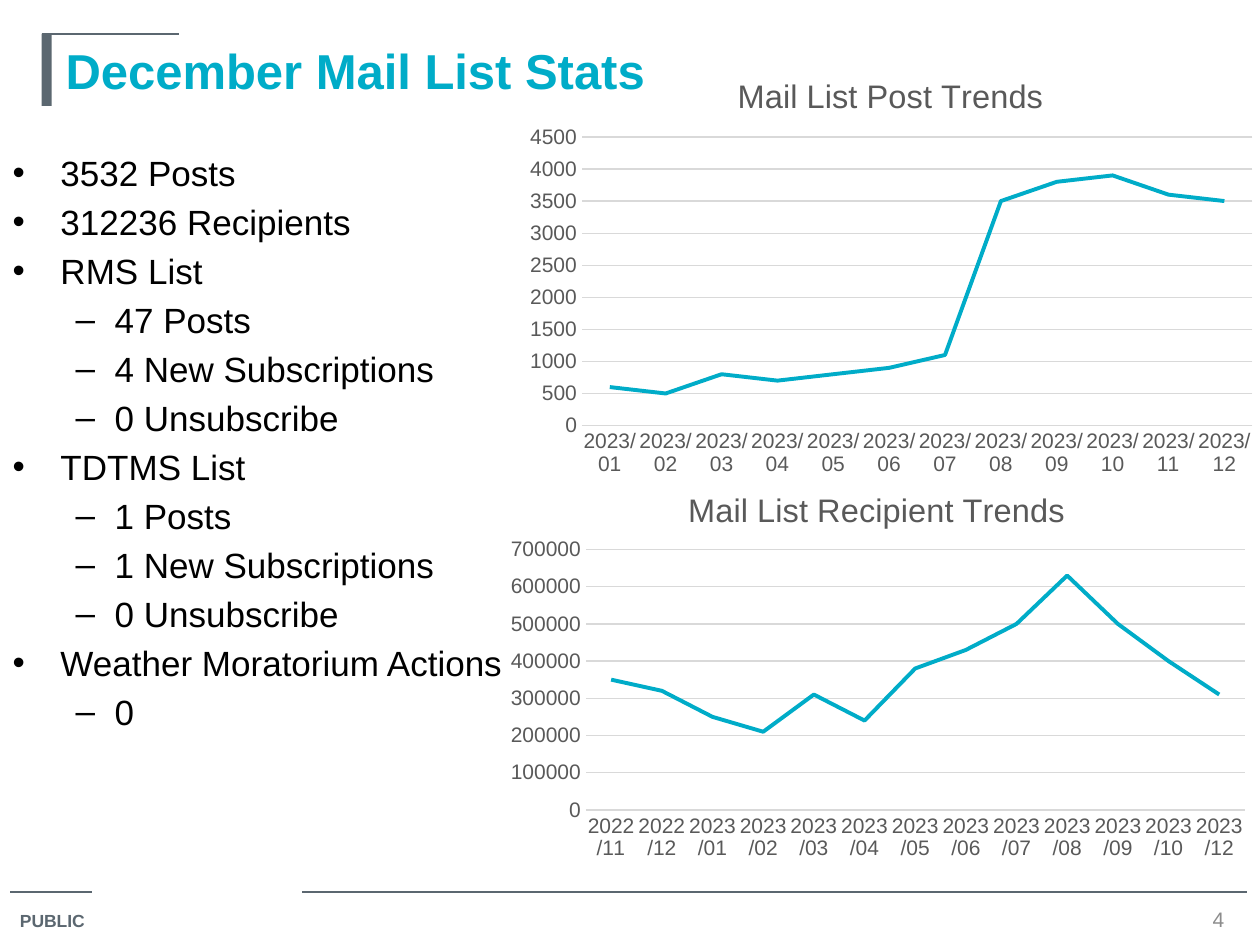
"""Build the December mailing statistics slide."""
from dataclasses import dataclass

import lxml.etree
import pptx
import pptx.chart.data
import pptx.dml.color
import pptx.enum.chart
import pptx.enum.shapes
import pptx.enum.text
import pptx.oxml
import pptx.oxml.ns
import pptx.util

Inches = pptx.util.Inches
Pt = pptx.util.Pt
qn = pptx.oxml.ns.qn
ALIGN = pptx.enum.text.PP_ALIGN
ANCHOR = pptx.enum.text.MSO_ANCHOR
CHART = pptx.enum.chart


@dataclass(frozen=True)
class Theme:
    """Hold the colours, font and type sizes."""
    face: str = "Arial"
    teal: str = "00ACC8"
    slate: str = "5B6770"
    ink: str = "000000"
    label: str = "595959"
    pale: str = "8C8C8C"
    grid: str = "D9D9D9"
    head: float = 28
    body: float = 20
    title: float = 18.6
    tick: float = 12
    mark: float = 10


LOOK = Theme()

POINTS = [
    (0, "3532 Posts"),
    (0, "312236 Recipients"),
    (0, "RMS List"),
    (1, "47 Posts"),
    (1, "4 New Subscriptions"),
    (1, "0 Unsubscribe"),
    (0, "TDTMS List"),
    (1, "1 Posts"),
    (1, "1 New Subscriptions"),
    (1, "0 Unsubscribe"),
    (0, "Weather Moratorium Actions"),
    (1, "0"),
]
BULLETS = [("•", 0.38, -0.38), ("–", 0.81, -0.31)]

YEAR = [f"2023/{month:02}" for month in range(1, 13)]
POSTS = dict(
    title="Mail List Post Trends", cats=YEAR, top=4500, step=500,
    vals=[600, 500, 800, 700, 800, 900, 1100, 3500, 3800, 3900, 3600, 3500],
    plot=dict(x=0.09, y=0.195, w=0.89, h=0.67))
READERS = dict(
    title="Mail List Recipient Trends",
    cats=["2022/11", "2022/12"] + YEAR[:10] + YEAR[11:],
    top=700000, step=100000,
    vals=[350000, 320000, 250000, 210000, 310000, 240000, 380000, 430000,
          500000, 630000, 500000, 400000, 310000],
    plot=dict(x=0.12, y=0.205, w=0.86, h=0.65))


def apply(item, **values):
    """Set each named attribute on the item."""
    for name, value in values.items():
        setattr(item, name, value)


def color(code):
    """Turn a hex code into a colour."""
    return pptx.dml.color.RGBColor.from_string(code)


def style(font, size, code, bold=False):
    """Format a font with the theme face."""
    apply(font, name=LOOK.face, size=Pt(size), bold=bold)
    font.color.rgb = color(code)


def stroke(line, code, width):
    """Format a line."""
    line.color.rgb = color(code)
    line.width = Pt(width)


def place(shape, box):
    """Move a shape to a box in inches."""
    apply(shape, **dict(zip(("left", "top", "width", "height"), map(Inches, box))))


def rule(slide, left, top, width):
    """Draw a thin horizontal line."""
    line = slide.shapes.add_connector(
        pptx.enum.shapes.MSO_CONNECTOR.STRAIGHT,
        Inches(left), Inches(top), Inches(left + width), Inches(top))
    stroke(line.line, LOOK.slate, 0.75)
    lxml.etree.SubElement(line._element.spPr, qn("a:effectLst"))


def label(slide, box, text, size, code, bold=False, **values):
    """Add a small one-line text box."""
    frame = slide.shapes.add_textbox(*map(Inches, box)).text_frame
    apply(frame, word_wrap=True, **values)
    para = frame.paragraphs[0]
    run = para.add_run()
    run.text = text
    style(run.font, size, code, bold)
    return para


def header(slide, box):
    """Place the title with its bar and line."""
    left, top, width, height = box
    title = slide.shapes.title
    place(title, box)
    frame = title.text_frame
    apply(frame, text="December Mail List Stats", vertical_anchor=ANCHOR.TOP,
          auto_size=pptx.enum.text.MSO_AUTO_SIZE.NONE)
    para = frame.paragraphs[0]
    para.alignment = ALIGN.LEFT
    style(para.runs[0].font, LOOK.head, LOOK.teal, True)
    bar = slide.shapes.add_shape(
        pptx.enum.shapes.MSO_SHAPE.RECTANGLE,
        Inches(left - 0.09), Inches(top), Inches(0.08), Inches(height - 0.08))
    bar.shadow.inherit = False
    bar.fill.solid()
    bar.fill.fore_color.rgb = color(LOOK.slate)
    bar.line.fill.background()
    rule(slide, left - 0.09, top, 1.09)


def points(slide, box):
    """Fill the body with the bulleted figures."""
    body = slide.placeholders[1]
    place(body, box)
    frame = body.text_frame
    apply(frame, auto_size=pptx.enum.text.MSO_AUTO_SIZE.NONE,
          vertical_anchor=ANCHOR.TOP)
    for index, (level, text) in enumerate(POINTS):
        para = frame.add_paragraph() if index else frame.paragraphs[0]
        apply(para, level=level, space_before=Pt(4 if index else 0))
        sign, left, hang = BULLETS[level]
        props = para._p.get_or_add_pPr()
        props.set("marL", str(Inches(left)))
        props.set("indent", str(Inches(hang)))
        lxml.etree.SubElement(props, qn("a:buChar")).set("char", sign)
        run = para.add_run()
        run.text = text
        style(run.font, LOOK.body, LOOK.ink)


def frame_plot(chart, plot):
    """Fix the inner plot area as fractions of the chart."""
    area = chart._chartSpace.chart.plotArea
    for old in area.findall(qn("c:layout")):
        area.remove(old)
    outer = lxml.etree.Element(qn("c:layout"))
    area.insert(0, outer)
    inner = lxml.etree.SubElement(outer, qn("c:manualLayout"))
    values = dict(layoutTarget="inner", xMode="edge", yMode="edge", **plot)
    for name, value in values.items():
        lxml.etree.SubElement(inner, qn(f"c:{name}")).set("val", str(value))


def trend(slide, box, facts):
    """Add one line chart."""
    data = pptx.chart.data.CategoryChartData()
    data.categories = facts["cats"]
    data.add_series("Series 1", facts["vals"])
    chart = slide.shapes.add_chart(
        CHART.XL_CHART_TYPE.LINE, *map(Inches, box), data).chart
    style(chart.font, LOOK.mark, LOOK.ink)
    apply(chart, has_legend=False, has_title=True)
    head = chart.chart_title
    head.include_in_layout = False
    head.text_frame.text = facts["title"]
    style(head.text_frame.paragraphs[0].runs[0].font, LOOK.title, LOOK.label)
    none = CHART.XL_TICK_MARK.NONE
    for axis in (chart.category_axis, chart.value_axis):
        apply(axis, major_tick_mark=none, minor_tick_mark=none)
        style(axis.tick_labels.font, LOOK.tick, LOOK.label)
    stroke(chart.category_axis.format.line, LOOK.grid, 0.75)
    scale = chart.value_axis
    apply(scale, minimum_scale=0, maximum_scale=facts["top"],
          major_unit=facts["step"], has_major_gridlines=True)
    scale.format.line.fill.background()
    stroke(scale.major_gridlines.format.line, LOOK.grid, 0.75)
    chart.plots[0].vary_by_categories = False
    series = chart.plots[0].series[0]
    series.smooth = False
    series.marker.style = CHART.XL_MARKER_STYLE.NONE
    stroke(series.format.line, LOOK.teal, 2.25)
    frame_plot(chart, facts["plot"])


def footer(slide, box):
    """Place the footer lines, marking and page number."""
    left, top, width, height = box
    rule(slide, left, top, 0.65)
    rule(slide, left + 2.32, top, width - 2.32)
    label(slide, (left - 0.02, top + 0.09, 0.77, 0.28), "PUBLIC",
          LOOK.mark, LOOK.slate, True)
    page = label(slide, (left + width - 0.48, top + 0.1, 0.5, 0.23), "4",
                 LOOK.tick, LOOK.pale, vertical_anchor=ANCHOR.MIDDLE)
    page.alignment = ALIGN.CENTER


def main():
    """Build and save the slide."""
    deck = pptx.Presentation()
    apply(deck, slide_width=Inches(10), slide_height=Inches(7.5))
    slide = deck.slides.add_slide(deck.slide_layouts[1])
    header(slide, (0.42, 0.27, 9.25, 0.65))
    points(slide, (0, 1.15, 9.75, 4.72))
    footer(slide, (0.08, 7.08, 9.82, 0.4))
    trend(slide, (3.92, 3.71, 6.08, 3.18), READERS)
    trend(slide, (4.08, 0.42, 5.98, 3.42), POSTS)
    deck.save("out.pptx")


if __name__ == "__main__":
    main()
